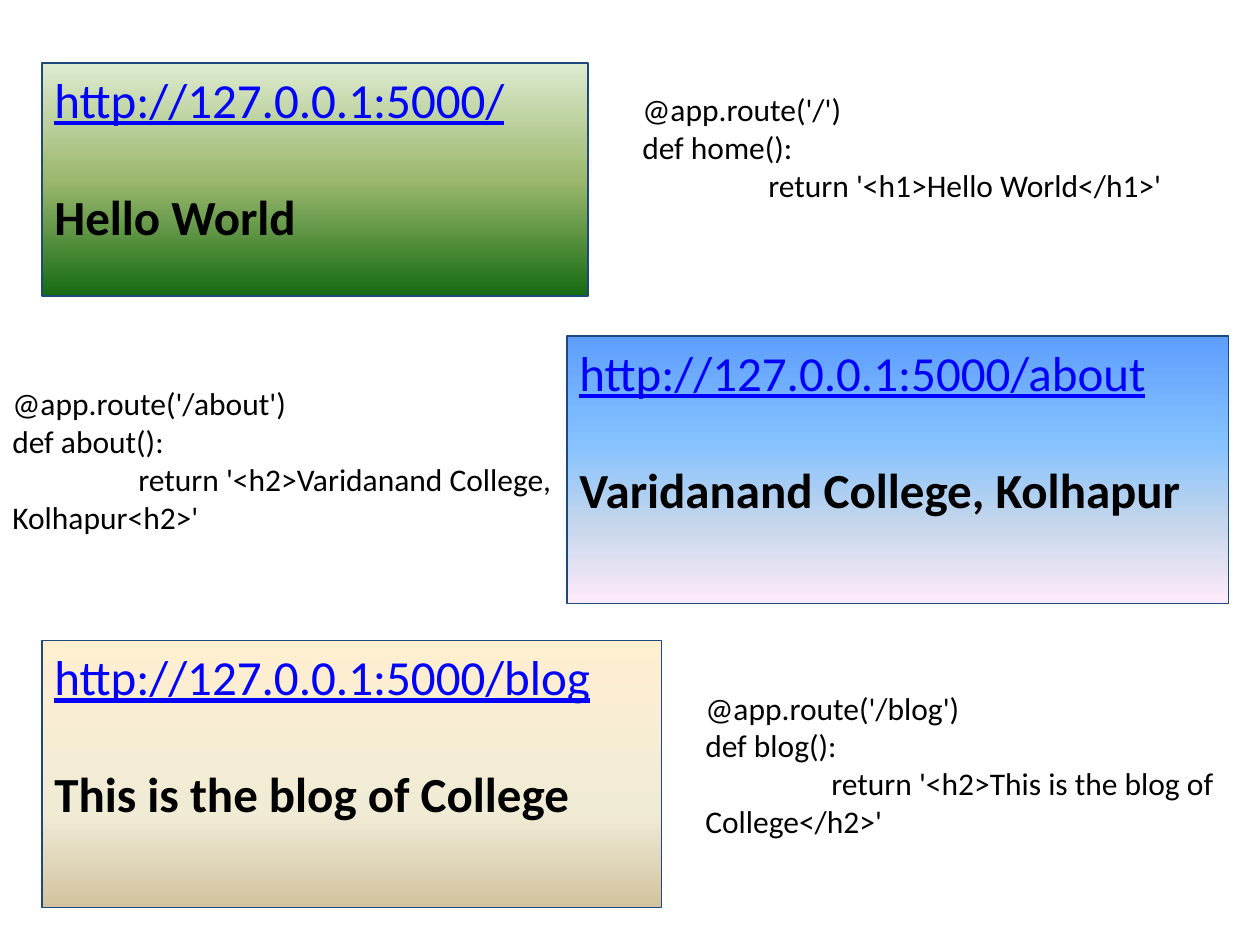
import lxml.etree
import pptx
import pptx.dml.color
import pptx.enum.shapes
import pptx.enum.text
import pptx.oxml.ns
import pptx.util

Pt = pptx.util.Pt
RGBColor = pptx.dml.color.RGBColor
qn = pptx.oxml.ns.qn

BLACK = RGBColor(0x00, 0x00, 0x00)
LINK_BLUE = RGBColor(0x00, 0x00, 0xFF)
BORDER_NAVY = RGBColor(0x1F, 0x49, 0x7D)
BLUE_STOPS = [
    (0, RGBColor(0x5E, 0x9E, 0xFF)),
    (40, RGBColor(0x85, 0xC2, 0xFF)),
    (70, RGBColor(0xC4, 0xD6, 0xEB)),
    (100, RGBColor(0xFF, 0xEB, 0xFA)),
]
SAND_STOPS = [
    (0, RGBColor(0xFF, 0xEF, 0xD1)),
    (65, RGBColor(0xF0, 0xEB, 0xD5)),
    (100, RGBColor(0xD1, 0xC3, 0x9F)),
]
GREEN_STOPS = [
    (0, RGBColor(0xDD, 0xEB, 0xCF)),
    (50, RGBColor(0x9C, 0xB8, 0x6E)),
    (100, RGBColor(0x15, 0x6B, 0x13)),
]
FONT = "Calibri"
HOST = "http://127.0.0.1:5000"
COLLEGE = "Varidanand College, Kolhapur"
BLOG = "This is the blog of College"


def add_run(paragraph, text, size, color, bold=False, underline=False):
    """Append one formatted run to a left-aligned paragraph."""
    paragraph.alignment = pptx.enum.text.PP_ALIGN.LEFT
    run = paragraph.add_run()
    run.text = text
    run.font.name = FONT
    run.font.size = Pt(size)
    run.font.color.rgb = color
    run.font.bold = bold
    run.font.underline = underline


def set_tab_width(paragraph, width):
    """Set the default distance between tab stops of a paragraph."""
    paragraph._p.get_or_add_pPr().set("defTabSz", str(Pt(width)))


def fill_gradient(shape, stops):
    """Fill a shape from top to bottom with any number of colour stops."""
    shape.fill.gradient()
    shape.fill.gradient_angle = 270
    stop_list = shape.fill._xPr.find(qn("a:gradFill")).find(qn("a:gsLst"))
    for old_stop in list(stop_list):
        stop_list.remove(old_stop)
    for percent, color in stops:
        stop = lxml.etree.SubElement(stop_list, qn("a:gs"), pos=str(percent * 1000))
        lxml.etree.SubElement(stop, qn("a:srgbClr"), val=str(color))


def add_browser_page(slide, box, route, message, stops):
    """Add a gradient page with its address and the message it shows."""
    shape = slide.shapes.add_shape(
        pptx.enum.shapes.MSO_SHAPE.RECTANGLE, *map(Pt, box)
    )
    shape.shadow.inherit = False
    fill_gradient(shape, stops)
    shape.line.color.rgb = BORDER_NAVY
    shape.line.width = Pt(0.75)
    frame = shape.text_frame
    frame.word_wrap = True
    frame.vertical_anchor = pptx.enum.text.MSO_ANCHOR.TOP
    add_run(frame.paragraphs[0], HOST + route, 28, LINK_BLUE, underline=True)
    paragraph = frame.add_paragraph()
    paragraph.space_before = Pt(33.5)
    add_run(paragraph, message, 28, BLACK, bold=True)


def add_route_code(slide, box, route, function, markup):
    """Add the three code lines that serve one route."""
    frame = slide.shapes.add_textbox(*map(Pt, box)).text_frame
    frame.word_wrap = True
    frame.auto_size = pptx.enum.text.MSO_AUTO_SIZE.SHAPE_TO_FIT_TEXT
    lines = [f"@app.route('{route}')", f"def {function}():", f"\treturn '{markup}'"]
    for index, line in enumerate(lines):
        paragraph = frame.add_paragraph() if index else frame.paragraphs[0]
        set_tab_width(paragraph, 72)
        add_run(paragraph, line, 18, BLACK)


def main():
    """Build the slide of routes and the pages they return."""
    presentation = pptx.Presentation()
    presentation.slide_width = Pt(720)
    presentation.slide_height = Pt(540)
    slide = presentation.slides.add_slide(presentation.slide_layouts[6])

    add_browser_page(slide, (324, 192, 378, 152.7), "/about", COLLEGE, BLUE_STOPS)
    add_browser_page(slide, (24, 365.8, 354, 152.7), "/blog", BLOG, SAND_STOPS)
    add_browser_page(slide, (24, 36, 312, 133.2), "/", "Hello World", GREEN_STOPS)

    add_route_code(slide, (360, 48, 360, 72.7), "/", "home", "<h1>Hello World</h1>")
    add_route_code(slide, (0, 216, 360, 94.5), "/about", "about", f"<h2>{COLLEGE}<h2>")
    add_route_code(slide, (396, 390, 324, 94.5), "/blog", "blog", f"<h2>{BLOG}</h2>")

    presentation.save("out.pptx")


if __name__ == "__main__":
    main()
